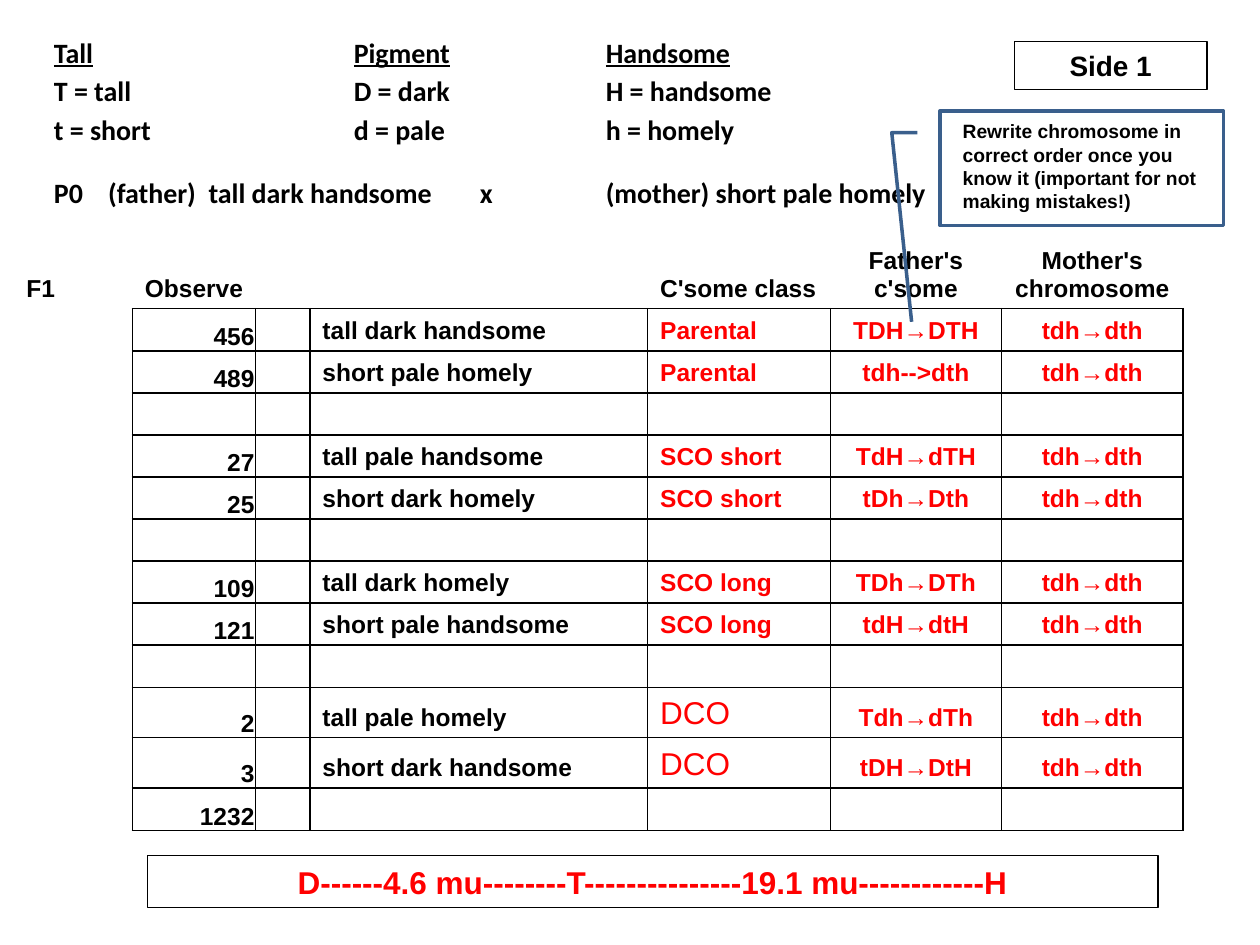
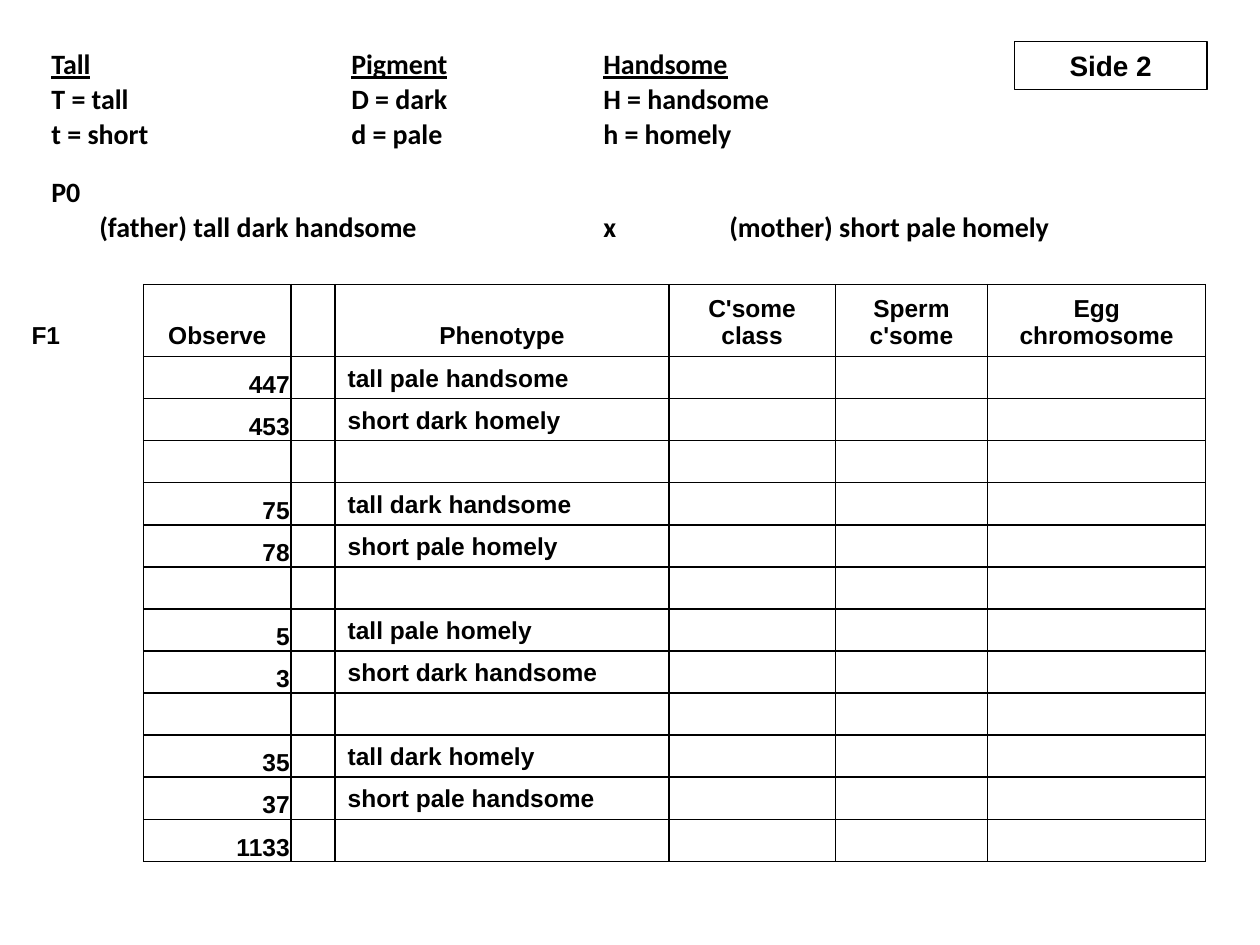
from lxml import etree
from pptx import Presentation
from pptx import util as u
from pptx.dml.color import RGBColor
from pptx.enum import shapes, text
from pptx.oxml.ns import qn

BLACK, RED, BLUE, WHITE = "000000", "FF0000", "3A5F8C", "FFFFFF"
LEFT, CENTER, RIGHT = text.PP_ALIGN.LEFT, text.PP_ALIGN.CENTER, text.PP_ALIGN.RIGHT
PLAIN_TABLE = "{2D5ABB26-0587-4C30-8999-92F81FD0307C}"
ROW_HEIGHT = 4.01 / 12
COUNT_COLUMN, CLASS_COLUMN, FATHER_COLUMN = 1, 4, 5

ALLELES = [
    "Tall\tPigment\tHandsome",
    "T = tall\tD = dark\tH = handsome",
    "t = short\td = pale\th = homely",
]
ALLELE_TABS = [2.38, 4.38]

MOTHER = "tdh→dth"
SIDE_1_ROWS = [
    ("456", "tall dark handsome", "Parental", "TDH→DTH", MOTHER),
    ("489", "short pale homely", "Parental", "tdh-->dth", MOTHER),
    (),
    ("27", "tall pale handsome", "SCO short", "TdH→dTH", MOTHER),
    ("25", "short dark homely", "SCO short", "tDh→Dth", MOTHER),
    (),
    ("109", "tall dark homely", "SCO long", "TDh→DTh", MOTHER),
    ("121", "short pale handsome", "SCO long", "tdH→dtH", MOTHER),
    (),
    ("2", "tall pale homely", "DCO", "Tdh→dTh", MOTHER),
    ("3", "short dark handsome", "DCO", "tDH→DtH", MOTHER),
    ("1232",),
]
SIDE_2_ROWS = [
    ("447", "tall pale handsome"),
    ("453", "short dark homely"),
    (),
    ("75", "tall dark handsome"),
    ("78", "short pale homely"),
    (),
    ("5", "tall pale homely"),
    ("3", "short dark handsome"),
    (),
    ("35", "tall dark homely"),
    ("37", "short pale handsome"),
    ("1133",),
]


def rgb(color):
    return RGBColor.from_string(color)


def write(paragraph, words, size=14, font="Arial", color=BLACK, bold=True,
          underline=False, align=LEFT, before=0, spacing=None, tabs=()):
    paragraph.alignment = align
    paragraph.space_before = u.Pt(before)
    if spacing:
        paragraph.line_spacing = spacing
    if tabs:
        properties = paragraph._p.get_or_add_pPr()
        tab_list = etree.SubElement(properties, qn("a:tabLst"))
        for position in tabs:
            etree.SubElement(tab_list, qn("a:tab"), pos=str(u.Inches(position)), algn="l")
    if not words:
        etree.SubElement(paragraph._p, qn("a:endParaRPr"), sz=str(size * 100))
        return
    run = paragraph.add_run()
    run.text = words
    run.font.size = u.Pt(size)
    run.font.name = font
    run.font.bold = bold
    run.font.underline = underline
    run.font.color.rgb = rgb(color)


def place(shape, left, top, width, height):
    shape.left, shape.top = u.Inches(left), u.Inches(top)
    shape.width, shape.height = u.Inches(width), u.Inches(height)


def outline(shape, color, width):
    shape.line.color.rgb = rgb(color)
    shape.line.width = u.Pt(width)


def add_side_label(slide, words):
    title = slide.shapes.title
    place(title, 8.05, 0.33, 1.53, 0.38)
    outline(title, BLACK, 0.75)
    frame = title.text_frame
    frame.auto_size = text.MSO_AUTO_SIZE.NONE
    frame.vertical_anchor = text.MSO_ANCHOR.MIDDLE
    write(frame.paragraphs[0], words, size=16, align=CENTER)


def add_box(slide, kind, left, top, width, height):
    box = slide.shapes.add_shape(kind, 0, 0, 0, 0)
    place(box, left, top, width, height)
    box.shadow.inherit = False
    box.fill.background()
    box.text_frame.word_wrap = True
    return box


def add_cross(slide, left, top, height, cross_lines, spacing, gap):
    box = slide.shapes.add_textbox(0, 0, 0, 0)
    place(box, left, top, 9.33, height)
    frame = box.text_frame
    frame.word_wrap = True
    lines = [(words, ALLELE_TABS) for words in ALLELES] + cross_lines
    for index, (words, tabs) in enumerate(lines):
        paragraph = frame.paragraphs[0] if index == 0 else frame.add_paragraph()
        write(paragraph, words, size=16, font="Calibri", underline=index == 0,
              before=gap if index == len(ALLELES) else 2.8, spacing=spacing, tabs=tabs)


def add_borders(cell):
    properties = cell._tc.get_or_add_tcPr()
    for side in ("lnL", "lnR", "lnT", "lnB"):
        line = etree.SubElement(properties, qn("a:" + side), w=str(u.Pt(1)))
        fill = etree.SubElement(line, qn("a:solidFill"))
        etree.SubElement(fill, qn("a:srgbClr"), val=BLACK)


def body_format(column, words):
    if column == COUNT_COLUMN:
        return {"align": RIGHT}
    if words == "DCO":
        return {"size": 18, "bold": False, "color": RED}
    return {"align": CENTER if column >= FATHER_COLUMN else LEFT,
            "color": RED if column >= CLASS_COLUMN else BLACK}


def add_cell(cell, words, bordered, **style):
    if bordered:
        add_borders(cell)
    cell.fill.background()
    cell.vertical_anchor = text.MSO_ANCHOR.BOTTOM
    write(cell.text_frame.paragraphs[0], words, **style)


def add_offspring_table(slide, left, top, widths, headers, header_height, rows,
                        open_header=False, centered_from=1):
    frame = slide.shapes.add_table(len(rows) + 1, len(widths), u.Inches(left), u.Inches(top),
                                   u.Inches(sum(widths)), u.Inches(1))
    table = frame.table
    table.first_row = table.horz_banding = False
    table._tbl.tblPr.find(qn("a:tableStyleId")).text = PLAIN_TABLE
    for column, width in enumerate(widths):
        table.columns[column].width = u.Inches(width)

    table.rows[0].height = u.Inches(header_height)
    for column, words in enumerate(headers):
        add_cell(table.cell(0, column), words, column > 0 and not open_header,
                 align=CENTER if column >= centered_from else LEFT)

    for row, values in enumerate(rows, 1):
        table.rows[row].height = u.Inches(0.4 if "DCO" in values else ROW_HEIGHT)
        count, traits = values[:1] or ("",), values[1:]
        entries = ("", *count, "", *traits)
        for column in range(len(widths)):
            words = entries[column] if column < len(entries) else ""
            cell = table.cell(row, column)
            add_cell(cell, words, column > 0, **body_format(column, words))
            if column == COUNT_COLUMN and words:
                cell.margin_left = cell.margin_right = cell.margin_top = u.Inches(0.01)
                cell.margin_bottom = 0
    return table


def add_gene_map(slide, words):
    box = add_box(slide, shapes.MSO_SHAPE.RECTANGLE, 1.17, 6.79, 8.02, 0.41)
    outline(box, BLACK, 0.75)
    write(box.text_frame.paragraphs[0], words, size=18, color=RED, align=CENTER)


def add_callout(slide, words):
    callout = add_box(slide, shapes.MSO_SHAPE.LINE_CALLOUT_2, 7.46, 0.88, 2.25, 0.91)
    for index, value in enumerate((0.19, -0.08, 0.19, -0.17, 1.84, -0.1)):
        callout.adjustments[index] = value
    callout.fill.solid()
    callout.fill.fore_color.rgb = rgb(WHITE)
    outline(callout, BLUE, 2)
    frame = callout.text_frame
    frame.vertical_anchor = text.MSO_ANCHOR.TOP
    frame.margin_left, frame.margin_right = u.Inches(0.18), u.Inches(0.2)
    frame.margin_top = u.Inches(0.07)
    write(frame.paragraphs[0], words, size=11)


def add_side(presentation, label):
    slide = presentation.slides.add_slide(presentation.slide_layouts[5])
    add_side_label(slide, label)
    return slide


def build_side_1(presentation):
    slide = add_side(presentation, "Side 1")
    cross = "P0\t(father)  tall dark handsome\tx\t(mother) short pale homely"
    add_cross(slide, 0.33, 0.23, 1.77, [(cross, [0.43, 3.38, 4.38])], None, 17)
    table = add_offspring_table(
        slide, 0.11, 1.8, [0.94, 0.98, 0.43, 2.68, 1.45, 1.36, 1.44],
        ["F1", "Observe", "", "", "C'some class", "Father's c'some", "Mother's chromosome"],
        0.65, SIDE_1_ROWS, open_header=True, centered_from=FATHER_COLUMN)
    table.cell(0, 1).merge(table.cell(0, 2))
    add_gene_map(slide, "D------4.6 mu--------T---------------19.1 mu------------H")
    add_callout(slide, "Rewrite chromosome in correct order once you know it "
                       "(important for not making mistakes!)")


def build_side_2(presentation):
    slide = add_side(presentation, "Side 2")
    cross = "\t(father) tall dark handsome\tx\t(mother) short pale homely"
    add_cross(slide, 0.31, 0.35, 2.17, [("P0", ()), (cross, [0.38, 4.38, 5.38])], 0.9, 15.6)
    add_offspring_table(
        slide, 0.15, 2.26, [0.99, 1.17, 0.35, 2.65, 1.32, 1.21, 1.73],
        ["F1", "Observe", "", "Phenotype", "C'some class", "Sperm c'some", "Egg chromosome"],
        0.57, SIDE_2_ROWS)


def main():
    presentation = Presentation()
    presentation.slide_width, presentation.slide_height = u.Inches(10), u.Inches(7.5)
    build_side_1(presentation)
    build_side_2(presentation)
    presentation.save("out.pptx")


if __name__ == "__main__":
    main()
